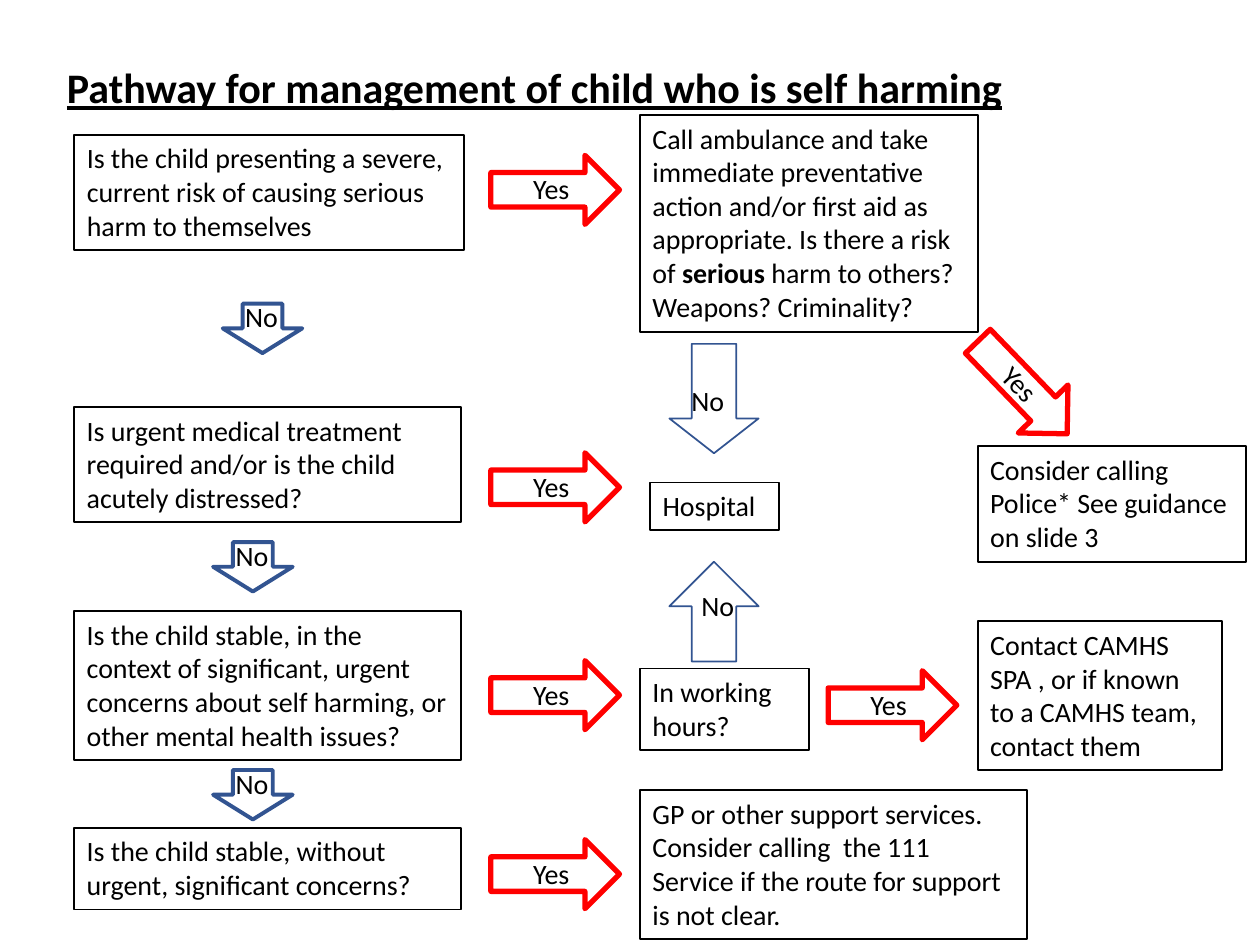
from pptx import Presentation
from pptx.dml.color import RGBColor
from pptx.enum.shapes import MSO_SHAPE
from pptx.enum.text import MSO_ANCHOR, MSO_AUTO_SIZE, PP_ALIGN
from pptx.util import Pt

BLACK = RGBColor(0x00, 0x00, 0x00)
WHITE = RGBColor(0xFF, 0xFF, 0xFF)
RED = RGBColor(0xFF, 0x00, 0x00)
BLUE = RGBColor(0x32, 0x54, 0x91)
FONT = "Calibri"
BODY = 16

LEFT_X, YES_X, MIDDLE_X, RIGHT_X = 42.5, 280.5, 365.75, 558.75

# left, top, width, height, runs of (text, bold)
QUESTIONS = [
    (LEFT_X, 77, 222.5, 66, [("Is the child presenting a severe, current risk of "
                              "causing serious harm to themselves", False)]),
    (LEFT_X, 232.5, 221, 66, [("Is urgent medical treatment required and/or is the "
                               "child acutely distressed?", False)]),
    (LEFT_X, 349.25, 221, 85, [("Is the child stable, in the context of significant, "
                                "urgent concerns about self harming, or other mental "
                                "health issues?", False)]),
    (LEFT_X, 473, 221, 46.75, [("Is the child stable, without urgent, significant "
                                "concerns?", False)]),
]
ACTIONS = [
    (MIDDLE_X, 65.75, 193, 124, [("Call ambulance and take immediate preventative action "
                                  "and/or first aid as appropriate. Is there a risk of ", False),
                                 ("serious", True),
                                 (" harm to others? Weapons? Criminality?", False)]),
    (371.5, 275.75, 73.5, 27.25, [("Hospital", False)]),
    (MIDDLE_X, 382, 96.5, 46.75, [("In working hours?", False)]),
    (MIDDLE_X, 451.5, 221, 85, [("GP or other support services. Consider calling  the 111 "
                                 "Service if the route for support is not clear.", False)]),
    (RIGHT_X, 255, 153.25, 66, [("Consider calling Police* See guidance on slide 3", False)]),
    (RIGHT_X, 355, 139.5, 85, [("Contact CAMHS SPA , or if known to a CAMHS team, "
                                "contact them", False)]),
]

# left, top, rotation
YES_ARROWS = [(YES_X, 88.75, 0), (YES_X, 258.75, 0), (YES_X, 377.5, 0),
              (YES_X, 479.75, 0), (473.25, 383.25, 0), (547.5, 201.75, 46)]
# left, top
NO_ARROWS = [(127.25, 173.5), (121.75, 309.75), (121.75, 440)]


def style_font(font, size=BODY):
    font.name, font.size, font.color.rgb = FONT, Pt(size), BLACK


def add_title(s, x, y, w, h, text):
    title = s.shapes.title
    title.left, title.top, title.width, title.height = Pt(x), Pt(y), Pt(w), Pt(h)
    tf = title.text_frame
    tf.text = text
    tf.word_wrap = False
    tf.auto_size = MSO_AUTO_SIZE.NONE
    tf.vertical_anchor = MSO_ANCHOR.TOP
    p = tf.paragraphs[0]
    p.alignment = PP_ALIGN.LEFT
    style_font(p.font, 24)
    p.font.bold = p.font.underline = True


def add_text(shapes, x, y, w, h, runs, wrap=True):
    sp = shapes.add_textbox(Pt(x), Pt(y), Pt(w), Pt(h))
    tf = sp.text_frame
    tf.word_wrap = wrap
    p = tf.paragraphs[0]
    style_font(p.font)
    for text, bold in runs:
        r = p.add_run()
        r.text = text
        if bold:
            r.font.bold = True
    return sp


def add_box(s, x, y, w, h, runs):
    sp = add_text(s.shapes, x, y, w, h, runs)
    sp.fill.solid()
    sp.fill.fore_color.rgb = WHITE
    sp.line.color.rgb = BLACK
    sp.line.width = Pt(1)


def add_arrow(shapes, kind, x, y, w, h, color, weight):
    sp = shapes.add_shape(kind, Pt(x), Pt(y), Pt(w), Pt(h))
    sp.shadow.inherit = False
    sp.fill.background()
    sp.line.color.rgb = color
    sp.line.width = Pt(weight)
    return sp


def add_yes_arrow(s, x, y, rotation):
    shapes = s.shapes.add_group_shape().shapes
    arrow = add_arrow(shapes, MSO_SHAPE.RIGHT_ARROW, x, y, 73.5, 39.5, RED, 3)
    arrow.fill.solid()
    arrow.fill.fore_color.rgb = WHITE
    label = add_text(shapes, x + 17, y + 6, 40, 26.75, [("Yes", False)], wrap=False)
    arrow.rotation = label.rotation = rotation


def add_no_arrow(s, x, y):
    shapes = s.shapes.add_group_shape().shapes
    add_arrow(shapes, MSO_SHAPE.DOWN_ARROW, x, y, 45.5, 28.25, BLUE, 2.25)
    add_text(shapes, x + 5.75, y - 5.75, 51, 26.75, [("No", False)])


def add_hospital_arrow(s, kind, x, y, w, h, head, label_x, label_y):
    """Thin arrow towards the hospital box; head is a share of the width."""
    arrow = add_arrow(s.shapes, kind, x, y, w, h, BLUE, 1)
    arrow.adjustments[1] = head
    add_text(s.shapes, label_x, label_y, 33, 26.75, [("No", False)], wrap=False)


def main():
    prs = Presentation()
    prs.slide_width, prs.slide_height = Pt(720), Pt(540)
    s = prs.slides.add_slide(prs.slide_layouts[5])
    add_title(s, 31, 31.75, 554.5, 36.5, "Pathway for management of child who is self harming")
    for box in QUESTIONS + ACTIONS:
        add_box(s, *box)
    for arrow in YES_ARROWS:
        add_yes_arrow(s, *arrow)
    for arrow in NO_ARROWS:
        add_no_arrow(s, *arrow)
    add_hospital_arrow(s, MSO_SHAPE.DOWN_ARROW, 382.5, 196.5, 51, 62.5, 0.39, 388, 215.5)
    add_hospital_arrow(s, MSO_SHAPE.UP_ARROW, 382.5, 321, 51, 57, 0.5, 393.75, 332.75)
    prs.save("out.pptx")


if __name__ == "__main__":
    main()
